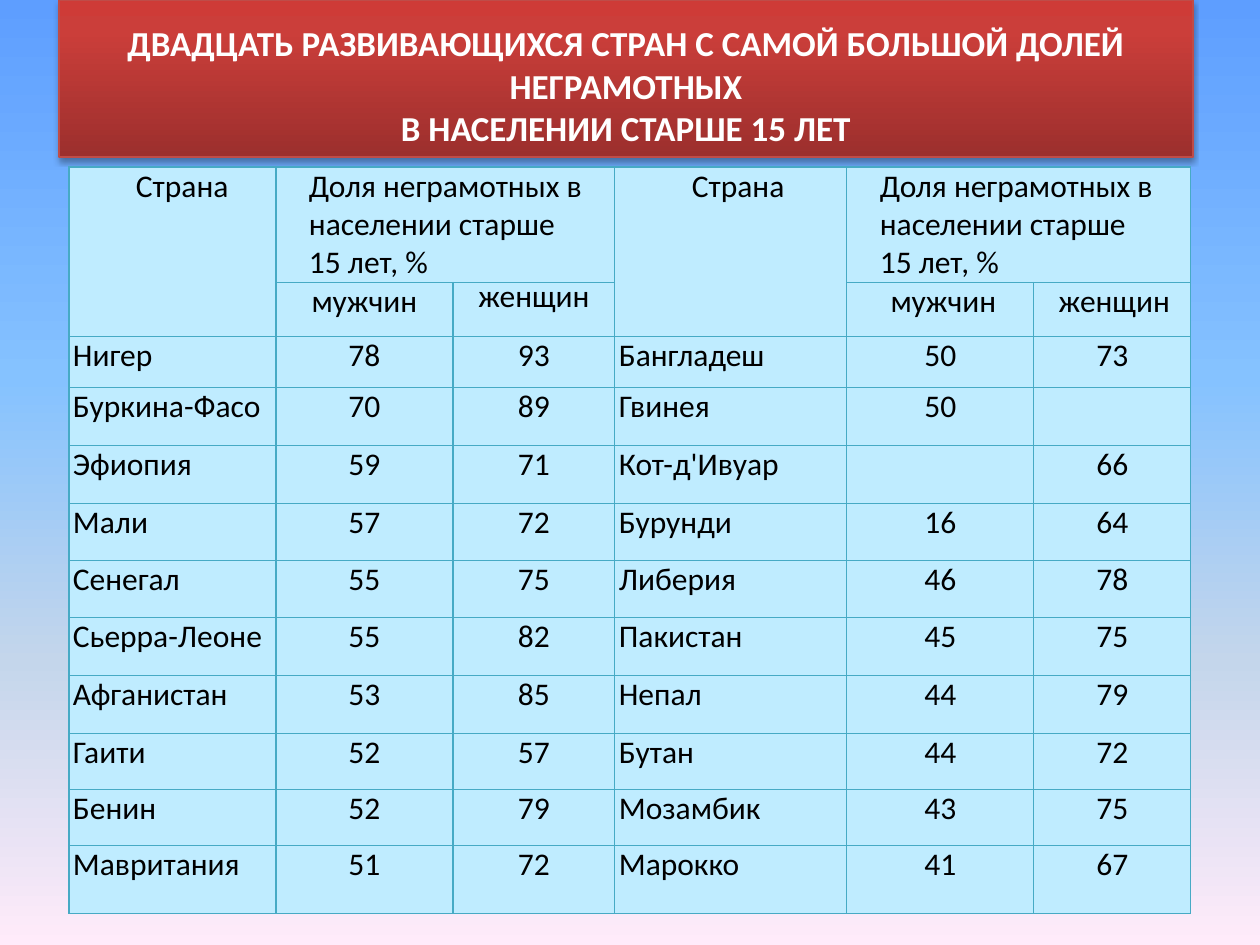
from dataclasses import dataclass
from itertools import product

from lxml import etree
from pptx import Presentation
from pptx.dml.color import RGBColor
from pptx.enum.text import MSO_ANCHOR, MSO_AUTO_SIZE, PP_ALIGN
from pptx.oxml.ns import qn
from pptx.util import Pt

CENTER = PP_ALIGN.CENTER
LEFT = PP_ALIGN.LEFT
MIDDLE = MSO_ANCHOR.MIDDLE
NO_AUTOFIT = MSO_AUTO_SIZE.NONE
FONT = "Calibri"
EMU_PER_PX = 914400 / 126
TITLE_ONLY = 5

TABLE_LEFT, TABLE_TOP = 69, 167
COLUMN_WIDTHS = [207, 177, 162, 232, 187, 157]
ROW_HEIGHTS = [115, 54, 51, 58, 58, 57, 57, 58, 58, 56, 56, 68]
TITLE_LINES = [
    "ДВАДЦАТЬ РАЗВИВАЮЩИХСЯ СТРАН С САМОЙ БОЛЬШОЙ ДОЛЕЙ НЕГРАМОТНЫХ",
    "В НАСЕЛЕНИИ СТАРШЕ 15 ЛЕТ",
]
SHARE_LINES = ("Доля неграмотных в населении старше", "15 лет, %")


@dataclass
class Heading:
    row: int
    column: int
    lines: tuple
    indent: int = 0
    alignment: PP_ALIGN = LEFT
    row_span: int = 1
    column_span: int = 1
    line_spacing: float = 0


HEADINGS = [
    Heading(0, 0, ("Страна",), 63, row_span=2),
    Heading(0, 1, SHARE_LINES, 29, column_span=2),
    Heading(0, 3, ("Страна",), 73, row_span=2),
    Heading(0, 4, SHARE_LINES, 29, column_span=2),
    Heading(1, 1, ("мужчин",), 0, CENTER),
    Heading(1, 2, ("женщин",), 0, CENTER, line_spacing=19.2),
    Heading(1, 4, ("мужчин",), 6, CENTER),
    Heading(1, 5, ("женщин",), 4, CENTER),
]

COUNTRIES = [
    ("Нигер", "78", "93", "Бангладеш", "50", "73"),
    ("Буркина-Фасо", "70", "89", "Гвинея", "50", ""),
    ("Эфиопия", "59", "71", "Кот-д'Ивуар", "", "66"),
    ("Мали", "57", "72", "Бурунди", "16", "64"),
    ("Сенегал", "55", "75", "Либерия", "46", "78"),
    ("Сьерра-Леоне", "55", "82", "Пакистан", "45", "75"),
    ("Афганистан", "53", "85", "Непал", "44", "79"),
    ("Гаити", "52", "57", "Бутан", "44", "72"),
    ("Бенин", "52", "79", "Мозамбик", "43", "75"),
    ("Мавритания", "51", "72", "Марокко", "41", "67"),
]


def px(length: int) -> int:
    return round(length * EMU_PER_PX)


def color(value: str) -> RGBColor:
    return RGBColor.from_string(value)


def add_color(parent, value: str):
    return etree.SubElement(parent, qn("a:srgbClr"), val=value)


def set_gradient(fill, element, stops: list, angle: int) -> None:
    fill.gradient()
    fill.gradient_angle = angle
    stop_list = next(element.iter(qn("a:gsLst")))
    for stop in list(stop_list):
        stop_list.remove(stop)
    for position, value in stops:
        add_color(etree.SubElement(stop_list, qn("a:gs"), pos=str(position * 1000)), value)


def add_shadow(shape) -> None:
    shape.shadow.inherit = False
    effects = next(shape.element.iter(qn("a:effectLst")))
    shadow = etree.SubElement(
        effects, qn("a:outerShdw"), blurRad=str(Pt(3.1)), dist=str(Pt(1.8)),
        dir="5400000", rotWithShape="0",
    )
    etree.SubElement(add_color(shadow, "000000"), qn("a:alpha"), val="35000")


def format_font(paragraph, size: int, value: str, bold: bool = False) -> None:
    paragraph.font.name = FONT
    paragraph.font.size = Pt(size)
    paragraph.font.bold = bold
    paragraph.font.color.rgb = color(value)


def format_title(title) -> None:
    title.left, title.top, title.width, title.height = px(59), 0, px(1134), px(157)
    set_gradient(title.fill, title.element,
                 [(0, "9C2F2D"), (80, "CB3E3A"), (100, "CE3B37")], 90)
    title.line.color.rgb = color("BF4C48")
    title.line.width = Pt(0.75)
    add_shadow(title)
    frame = title.text_frame
    frame.auto_size = NO_AUTOFIT
    frame.word_wrap = True
    frame.vertical_anchor = MIDDLE
    frame.margin_top, frame.margin_bottom = px(19), px(6)
    paragraph = frame.paragraphs[0]
    paragraph.alignment = CENTER
    format_font(paragraph, 20, "FFFFFF", True)
    paragraph.add_run().text = TITLE_LINES[0]
    paragraph.add_line_break()
    paragraph.add_run().text = TITLE_LINES[1]


def format_cell(cell) -> None:
    cell.margin_left = cell.margin_right = px(4)
    cell.margin_top = cell.margin_bottom = 0
    properties = cell._tc.get_or_add_tcPr()
    for side in ("lnL", "lnR", "lnT", "lnB"):
        border = etree.SubElement(properties, qn(f"a:{side}"), w=str(Pt(0.75)))
        add_color(etree.SubElement(border, qn("a:solidFill")), "46AAC5")
    cell.fill.solid()
    cell.fill.fore_color.rgb = color("BFECFF")


def write_cell(cell, lines: tuple, alignment: PP_ALIGN, indent: int = 0,
               line_spacing: float = 0) -> None:
    frame = cell.text_frame
    for index, line in enumerate(lines):
        paragraph = frame.add_paragraph() if index else frame.paragraphs[0]
        paragraph.text = line
        paragraph.alignment = alignment
        format_font(paragraph, 18, "000000")
        if indent:
            paragraph._p.get_or_add_pPr().set("marL", str(px(indent)))
        if line_spacing:
            paragraph.line_spacing = Pt(line_spacing)


def add_literacy_table(slide) -> None:
    row_count, column_count = len(ROW_HEIGHTS), len(COLUMN_WIDTHS)
    table = slide.shapes.add_table(
        row_count, column_count, px(TABLE_LEFT), px(TABLE_TOP),
        px(sum(COLUMN_WIDTHS)), px(sum(ROW_HEIGHTS)),
    ).table
    table.first_row = table.horz_banding = False
    for column, width in zip(table.columns, COLUMN_WIDTHS):
        column.width = px(width)
    for row, height in zip(table.rows, ROW_HEIGHTS):
        row.height = px(height)
    for row, column in product(range(row_count), range(column_count)):
        format_cell(table.cell(row, column))
    for heading in HEADINGS:
        cell = table.cell(heading.row, heading.column)
        if heading.row_span * heading.column_span > 1:
            cell.merge(table.cell(heading.row + heading.row_span - 1,
                                  heading.column + heading.column_span - 1))
        write_cell(cell, heading.lines, heading.alignment, heading.indent,
                   heading.line_spacing)
    for row, values in enumerate(COUNTRIES, 2):
        for column, value in enumerate(values):
            alignment = CENTER if column % 3 else LEFT
            write_cell(table.cell(row, column), (value,), alignment)


def main() -> None:
    presentation = Presentation()
    presentation.slide_width, presentation.slide_height = px(1260), px(945)
    slide = presentation.slides.add_slide(presentation.slide_layouts[TITLE_ONLY])
    set_gradient(slide.background.fill, slide.element,
                 [(0, "5E9EFF"), (40, "85C2FF"), (70, "C4D6EB"), (100, "FFEBFA")], 270)
    format_title(slide.shapes.title)
    add_literacy_table(slide)
    presentation.save("out.pptx")


if __name__ == "__main__":
    main()
